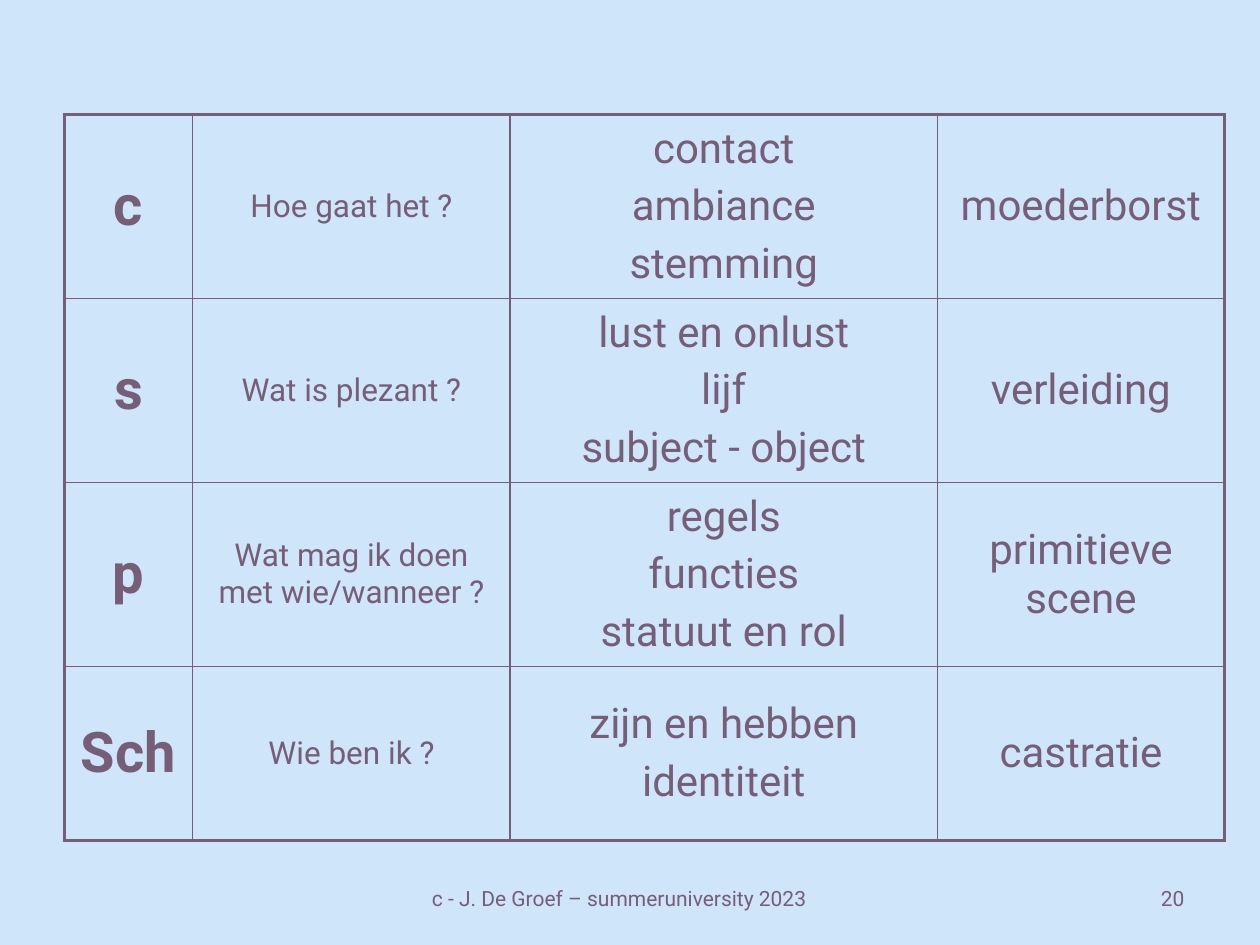
"""Build the slide with the table of four contact levels, their questions, themes and fantasies."""
from lxml import etree
from pptx import Presentation, util as u
from pptx.dml.color import RGBColor
from pptx.enum import text
from pptx.oxml import ns

SKY = RGBColor(0xCE, 0xE5, 0xFA)
PLUM = RGBColor(0x77, 0x5E, 0x78)
COLUMNS = [1.02, 2.52, 3.39, 2.28]
ROWS = [1.46, 1.46, 1.46, 1.38]
FORMATS = [
    {"size": u.Pt(32), "bold": True},
    {"size": u.Pt(18), "bold": False},
    {"size": u.Pt(24), "bold": False},
    {"size": u.Pt(24), "bold": False},
]
LEVELS = [
    ("c", "Hoe gaat het ?", "contact\nambiance\nstemming", "moederborst"),
    ("s", "Wat is plezant ?", "lust en onlust\nlijf\nsubject - object", "verleiding"),
    ("p", "Wat mag ik doen met wie/wanneer ?", "regels\nfuncties\nstatuut en rol", "primitieve scene"),
    ("Sch", "Wie ben ik ?", "zijn en hebben\nidentiteit", "castratie"),
]
FOOTERS = [
    ("c - J. De Groef – summeruniversity 2023", 2.16, 5.51, 0.29, text.PP_ALIGN.CENTER),
    ("20", 7.17, 2.33, 0.24, text.PP_ALIGN.RIGHT),
]


def write(paragraph, wording, alignment, font_format):
    paragraph.alignment = alignment
    run = paragraph.add_run()
    run.text = wording
    for key, value in {"name": "Roboto", **font_format}.items():
        setattr(run.font, key, value)
    run.font.color.rgb = PLUM


def draw_borders(cell, outer_sides):
    properties = cell._tc.get_or_add_tcPr()
    for index, side in enumerate(("L", "R", "T", "B")):
        width = u.Pt(2.25 if outer_sides[side] else 1)
        border = etree.Element(ns.qn(f"a:ln{side}"), w=str(width))
        fill = etree.SubElement(border, ns.qn("a:solidFill"))
        etree.SubElement(fill, ns.qn("a:srgbClr"), val=str(PLUM))
        properties.insert(index, border)


deck = Presentation()
deck.slide_width, deck.slide_height = u.Inches(10), u.Inches(7.5)
slide = deck.slides.add_slide(deck.slide_layouts[6])
slide.background.fill.solid()
slide.background.fill.fore_color.rgb = SKY

for wording, left, width, height, alignment in FOOTERS:
    footer = slide.shapes.add_textbox(*map(u.Inches, (left, 6.98, width, height))).text_frame
    footer.word_wrap = True
    write(footer.paragraphs[0], wording, alignment, {"size": u.Pt(12)})

levels = slide.shapes.add_table(
    len(ROWS), len(COLUMNS), *map(u.Inches, (0.51, 0.91, sum(COLUMNS), sum(ROWS)))
).table
levels.first_row = levels.horz_banding = False
for column, width in zip(levels.columns, COLUMNS):
    column.width = u.Inches(width)
for row, height in zip(levels.rows, ROWS):
    row.height = u.Inches(height)

for r, level in enumerate(LEVELS):
    for c, (wording, font_format) in enumerate(zip(level, FORMATS)):
        cell = levels.cell(r, c)
        cell.fill.background()
        cell.vertical_anchor = text.MSO_ANCHOR.MIDDLE
        draw_borders(cell, {"L": c == 0, "R": c == len(COLUMNS) - 1, "T": r == 0, "B": r == len(ROWS) - 1})
        for i, line in enumerate(wording.split("\n")):
            paragraph = cell.text_frame.add_paragraph() if i else cell.text_frame.paragraphs[0]
            paragraph.space_before = u.Pt(font_format["size"].pt * 0.2)
            write(paragraph, line, text.PP_ALIGN.CENTER, font_format)

deck.save("out.pptx")
